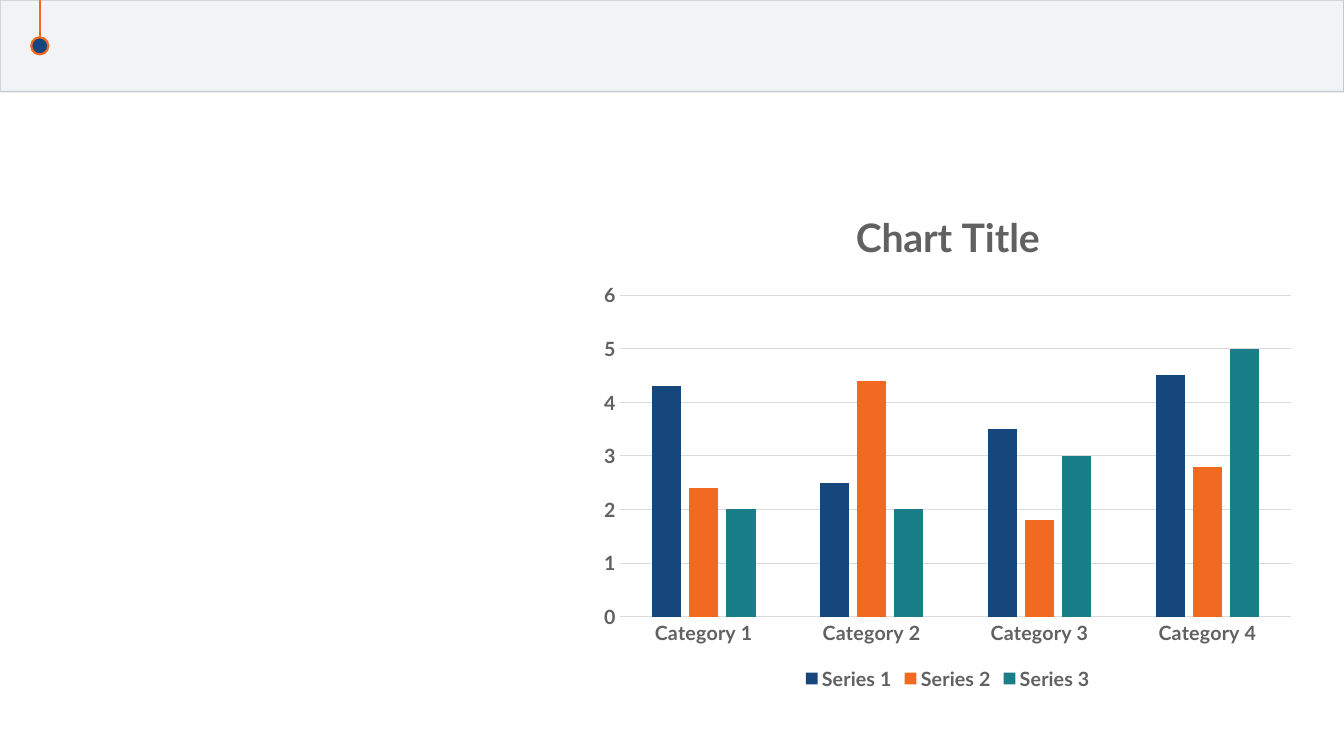
from dataclasses import dataclass

from lxml import etree
from pptx import Presentation
from pptx.chart.data import CategoryChartData
from pptx.dml.color import RGBColor
from pptx.enum.chart import XL_CHART_TYPE, XL_LEGEND_POSITION, XL_TICK_MARK
from pptx.enum.shapes import MSO_CONNECTOR, MSO_SHAPE
from pptx.oxml.ns import qn
from pptx.util import Inches, Pt

COLUMNS = XL_CHART_TYPE.COLUMN_CLUSTERED
LEGEND_BOTTOM = XL_LEGEND_POSITION.BOTTOM
NO_TICK = XL_TICK_MARK.NONE
STRAIGHT = MSO_CONNECTOR.STRAIGHT
RECTANGLE = MSO_SHAPE.RECTANGLE
OVAL = MSO_SHAPE.OVAL
BLANK_LAYOUT = 6


@dataclass(frozen=True)
class Theme:
    font: str = "Lato"
    ink: str = "091E35"
    navy: str = "17467C"
    orange: str = "F26922"
    text: str = "616161"
    grid: str = "DBDBDB"
    title_size: int = 28
    label_size: int = 14
    base_size: int = 10


@dataclass(frozen=True)
class Box:
    left: float
    top: float
    width: float
    height: float

    def lengths(self) -> tuple:
        return tuple(map(Inches, (self.left, self.top, self.width, self.height)))


@dataclass(frozen=True)
class Series:
    name: str
    values: tuple
    color: str


THEME = Theme()
CATEGORIES = [f"Category {number}" for number in range(1, 5)]
SERIES = [
    Series("Series 1", (4.3, 2.5, 3.5, 4.5), "16477C"),
    Series("Series 2", (2.4, 4.4, 1.8, 2.8), THEME.orange),
    Series("Series 3", (2, 2, 3, 5), "197E88"),
]


def paint(fill, color: str, opacity: int = 100) -> None:
    fill.solid()
    fill.fore_color.rgb = RGBColor.from_string(color)
    if opacity < 100:
        for element in fill._xPr.iter(qn("a:srgbClr")):
            if element.getparent().getparent() is fill._xPr:
                etree.SubElement(element, qn("a:alpha"), val=str(opacity * 1000))


def stroke(line, color: str, width: float, opacity: int = 100) -> None:
    paint(line.fill, color, opacity)
    line.width = Pt(width)


def style_font(font, size: int, bold: bool = True) -> None:
    font.name = THEME.font
    font.size = Pt(size)
    font.bold = bold
    font.color.rgb = RGBColor.from_string(THEME.text)


def add_plain_shape(page, kind, box: Box):
    shape = page.shapes.add_shape(kind, *box.lengths())
    shape.shadow.inherit = False
    return shape


def add_header(page) -> None:
    band = add_plain_shape(page, RECTANGLE, Box(0, 0, 13.33, 0.91))
    paint(band.fill, THEME.ink, 5)
    stroke(band.line, THEME.ink, 1, 20)

    cord = page.shapes.add_connector(
        STRAIGHT, Inches(0.4), Inches(0), Inches(0.4), Inches(0.43)
    )
    etree.SubElement(cord._element.spPr, qn("a:effectLst"))
    stroke(cord.line, THEME.orange, 1.5)

    bead = add_plain_shape(page, OVAL, Box(0.31, 0.37, 0.17, 0.17))
    paint(bead.fill, THEME.navy)
    stroke(bead.line, THEME.orange, 1.5)


def style_axes(chart) -> None:
    for axis in (chart.category_axis, chart.value_axis):
        axis.major_tick_mark = NO_TICK
        axis.minor_tick_mark = NO_TICK
        style_font(axis.tick_labels.font, THEME.label_size)
    stroke(chart.category_axis.format.line, THEME.grid, 0.75)
    values = chart.value_axis
    values.minimum_scale, values.maximum_scale, values.major_unit = 0, 6, 1
    values.format.line.fill.background()
    stroke(values.major_gridlines.format.line, THEME.grid, 0.75)


def add_column_chart(page, box: Box) -> None:
    data = CategoryChartData()
    data.categories = CATEGORIES
    for series in SERIES:
        data.add_series(series.name, series.values)
    chart = page.shapes.add_chart(COLUMNS, *box.lengths(), data).chart
    style_font(chart.font, THEME.base_size, bold=False)

    chart.has_title = True
    para = chart.chart_title.text_frame.paragraphs[0]
    para.text = "Chart Title"
    style_font(para.runs[0].font, THEME.title_size)
    chart.chart_title.include_in_layout = False

    chart.has_legend = True
    chart.legend.position = LEGEND_BOTTOM
    chart.legend.include_in_layout = False
    style_font(chart.legend.font, THEME.label_size)

    style_axes(chart)
    plot = chart.plots[0]
    plot.vary_by_categories = False
    plot.gap_width = 219
    plot.overlap = -27
    for columns, series in zip(plot.series, SERIES):
        paint(columns.format.fill, series.color)


def main() -> None:
    deck = Presentation()
    deck.slide_width = Inches(13.33)
    deck.slide_height = Inches(7.5)
    page = deck.slides.add_slide(deck.slide_layouts[BLANK_LAYOUT])
    add_header(page)
    add_column_chart(page, Box(5.85, 1.85, 7.1, 5.04))
    deck.save("out.pptx")


if __name__ == "__main__":
    main()
